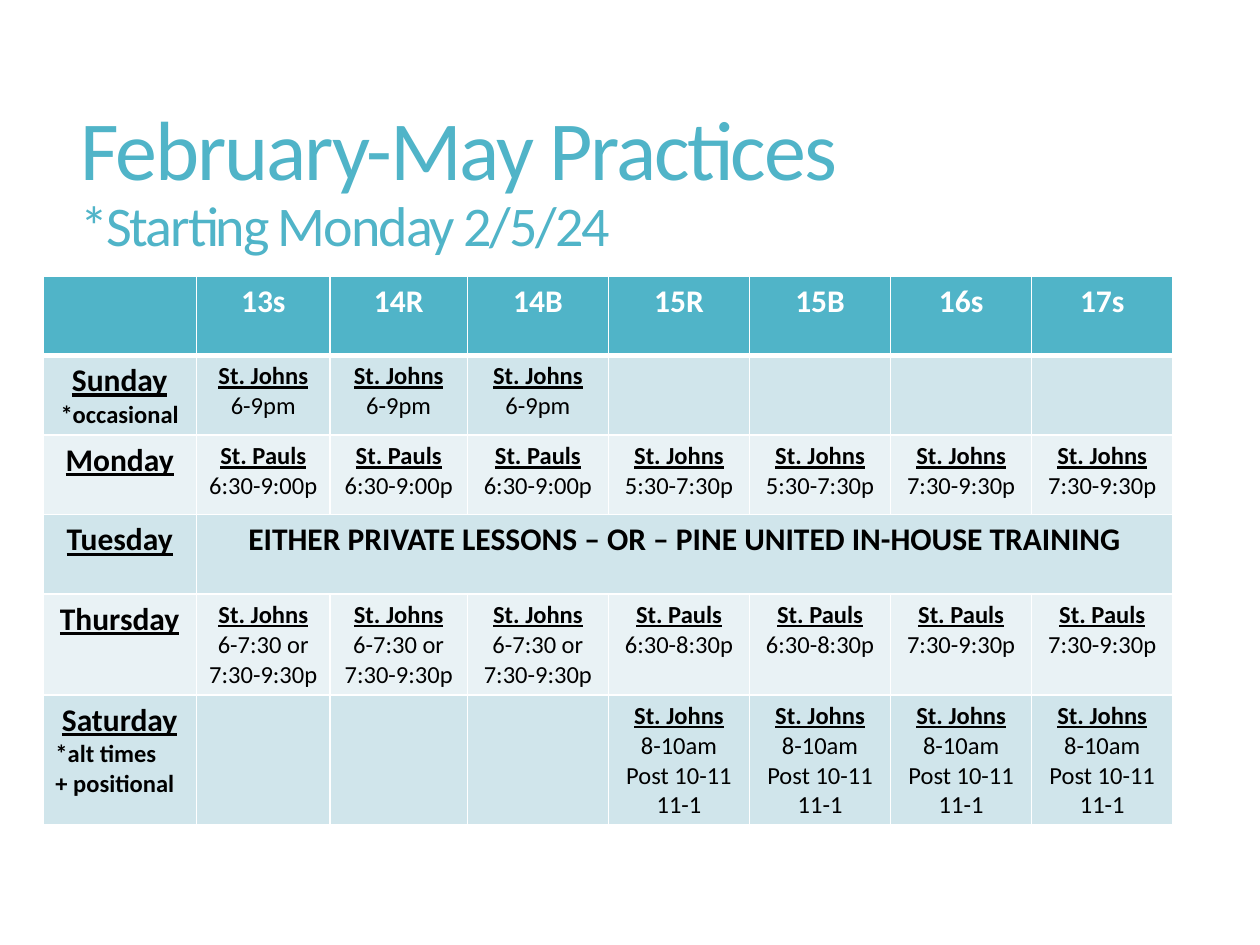
from lxml import etree
from pptx import Presentation
from pptx.dml.color import RGBColor
from pptx.enum.text import MSO_ANCHOR, PP_ALIGN
from pptx.oxml.ns import qn
from pptx.util import Inches, Pt

CENTER, LEFT = PP_ALIGN.CENTER, PP_ALIGN.LEFT
MIDDLE = MSO_ANCHOR.MIDDLE
FONT = "Calibri"
COLORS = {
    "teal": "50B4C8",
    "band_dark": "D0E5EB",
    "band_light": "E9F2F5",
    "white": "FFFFFF",
    "black": "000000",
}
COLUMN_WIDTHS = [1.22, 1.06, 1.09] + [1.12] * 5
ROW_HEIGHT = 0.63
TEAMS = ["13s", "14R", "14B", "15R", "15B", "16s", "17s"]
JOHNS, PAULS = "St. Johns", "St. Pauls"
TUESDAY = "EITHER PRIVATE LESSONS – OR – PINE UNITED IN-HOUSE TRAINING"
SCHEDULE = [
    ("Sunday", ["*occasional"], CENTER, [[JOHNS, "6-9pm"]] * 3 + [[]] * 4),
    ("Monday", [], CENTER,
     [[PAULS, "6:30-9:00p"]] * 3 + [[JOHNS, "5:30-7:30p"]] * 2
     + [[JOHNS, "7:30-9:30p"]] * 2),
    ("Tuesday", [], CENTER, []),
    ("Thursday", [], CENTER,
     [[JOHNS, "6-7:30 or", "7:30-9:30p"]] * 3 + [[PAULS, "6:30-8:30p"]] * 2
     + [[PAULS, "7:30-9:30p"]] * 2),
    ("Saturday", ["*alt times", "+ positional"], LEFT,
     [[]] * 3 + [[JOHNS, "8-10am", "Post 10-11", "11-1"]] * 4),
]


def color(name):
    """Return the named palette colour."""
    return RGBColor.from_string(COLORS[name])


def style_font(font, size, shade, bold=False, underline=False):
    """Set the typeface, size, colour and emphasis of a font."""
    font.name = FONT
    font.size = Pt(size)
    font.color.rgb = color(shade)
    font.bold = bold
    font.underline = underline


def add_title(page):
    """Add the two-line heading."""
    box = page.shapes.add_textbox(Inches(0.54), Inches(0.55), Inches(8.84), Inches(1.81))
    frame = box.text_frame
    frame.word_wrap = True
    frame.vertical_anchor = MIDDLE
    para = frame.paragraphs[0]
    para.line_spacing = 0.9
    for text, size in (("February-May Practices", 48), ("*Starting Monday 2/5/24", 32)):
        if para.runs:
            para.add_line_break()
        span = para.add_run()
        span.text = text
        style_font(span.font, size, "teal")
        span.font._element.set("spc", "-120")


def style_cell(cell, shade, top=1, bottom=1):
    """Give a cell white borders and a solid fill."""
    properties = cell._tc.get_or_add_tcPr()
    for side, width in (("L", 1), ("R", 1), ("T", top), ("B", bottom)):
        line = etree.SubElement(properties, qn(f"a:ln{side}"), w=str(Pt(width)))
        fill = etree.SubElement(line, qn("a:solidFill"))
        etree.SubElement(fill, qn("a:srgbClr"), val=COLORS["white"])
    cell.fill.solid()
    cell.fill.fore_color.rgb = color(shade)


def write_line(cell, text, size, shade="black", bold=False, underline=False, align=CENTER):
    """Write one paragraph at the end of a cell."""
    frame = cell.text_frame
    para = frame.add_paragraph() if cell.text else frame.paragraphs[0]
    para.text = text
    para.alignment = align
    style_font(para.font, size, shade, bold, underline)


def write_day(cell, day, notes, align):
    """Write a day name and the notes below it."""
    write_line(cell, day, 18, bold=True, underline=True)
    for note in notes:
        write_line(cell, note, 14, bold=True, align=align)


def write_session(cell, lines):
    """Write an underlined gym name followed by its times."""
    for index, text in enumerate(lines):
        heading = index == 0
        write_line(cell, text, 14, bold=heading, underline=heading)


def add_schedule(page):
    """Add the weekly practice table."""
    rows, columns = len(SCHEDULE) + 1, len(COLUMN_WIDTHS)
    table = page.shapes.add_table(
        rows, columns, Inches(0.34), Inches(2.19),
        Inches(sum(COLUMN_WIDTHS)), Inches(ROW_HEIGHT * rows)).table
    for column, width in zip(table.columns, COLUMN_WIDTHS):
        column.width = Inches(width)
    for index, row in enumerate(table.rows):
        row.height = Inches(ROW_HEIGHT)
        shade = "teal" if index == 0 else "band_dark" if index % 2 else "band_light"
        for cell in row.cells:
            style_cell(cell, shade, top=3 if index == 1 else 1, bottom=3 if index == 0 else 1)
    for column, team in enumerate(TEAMS, 1):
        write_line(table.cell(0, column), team, 18, "white", bold=True)
    for row, (day, notes, align, sessions) in enumerate(SCHEDULE, 1):
        write_day(table.cell(row, 0), day, notes, align)
        for column, lines in enumerate(sessions, 1):
            write_session(table.cell(row, column), lines)
        if not sessions:
            table.cell(row, 1).merge(table.cell(row, columns - 1))
            write_line(table.cell(row, 1), TUESDAY, 18, bold=True)


def main():
    """Build and save the practice schedule slide."""
    deck = Presentation()
    deck.slide_width, deck.slide_height = Inches(10), Inches(7.5)
    page = deck.slides.add_slide(deck.slide_layouts[6])
    add_title(page)
    add_schedule(page)
    deck.save("out.pptx")


if __name__ == "__main__":
    main()
